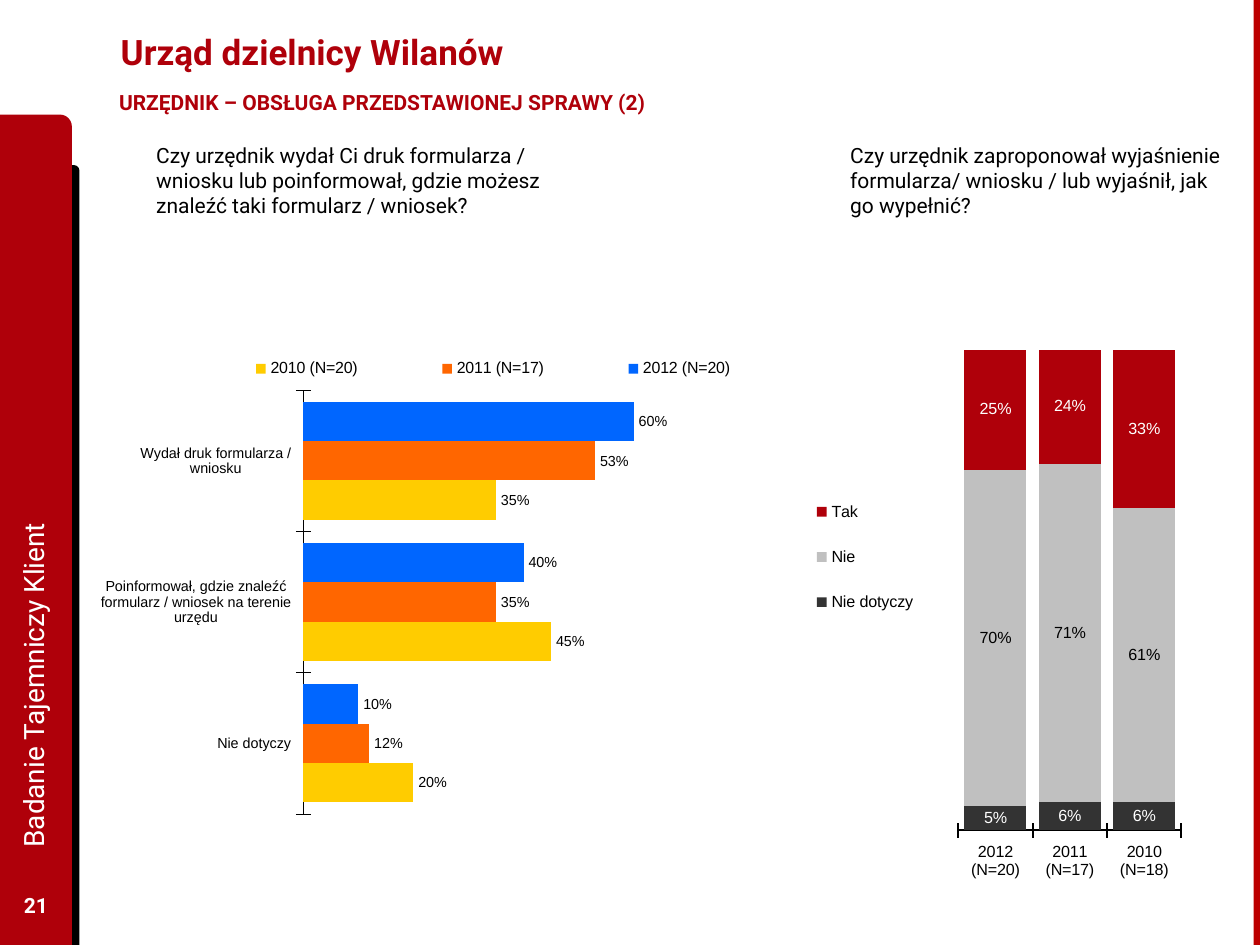
import pptx
import pptx.util
import pptx.oxml
import pptx.oxml.ns
import pptx.dml.color
import pptx.chart.data
import pptx.enum.chart
import pptx.enum.shapes
import pptx.enum.text

Cm = pptx.util.Cm
Pt = pptx.util.Pt
Kind = pptx.enum.chart.XL_CHART_TYPE
Side = pptx.enum.chart.XL_LEGEND_POSITION
Spot = pptx.enum.chart.XL_LABEL_POSITION
Tick = pptx.enum.chart.XL_TICK_MARK
Form = pptx.enum.shapes.MSO_SHAPE
Align = pptx.enum.text.PP_ALIGN
Mid = pptx.enum.text.MSO_ANCHOR.MIDDLE
Top = pptx.enum.text.MSO_ANCHOR.TOP

RED, WHITE, BLACK = "AF000A", "FFFFFF", "000000"


def tint(code):
    return pptx.dml.color.RGBColor.from_string(code)


def place(node, spot, box, inner=False):
    for old in node.findall(pptx.oxml.ns.qn("c:layout")):
        node.remove(old)
    rows = '<c:layoutTarget val="inner"/>' if inner else ""
    rows += '<c:xMode val="edge"/><c:yMode val="edge"/>'
    rows += "".join(f'<c:{key} val="{val}"/>' for key, val in zip("xywh", box))
    decl = pptx.oxml.ns.nsdecls("c")
    node.insert(spot, pptx.oxml.parse_xml(
        f"<c:layout {decl}><c:manualLayout>{rows}</c:manualLayout></c:layout>"))


class Deck:
    face = "Roboto"
    data = "Arial"

    def __init__(self):
        self.file = pptx.Presentation()
        self.file.slide_width = Cm(25.4)
        self.file.slide_height = Cm(19.05)
        self.slide = self.file.slides.add_slide(self.file.slide_layouts[5])

    def block(self, form, box, color):
        shape = self.slide.shapes.add_shape(form, *map(Cm, box))
        shape.shadow.inherit = False
        shape.fill.solid()
        shape.fill.fore_color.rgb = tint(color)
        shape.line.fill.background()

    def style(self, shape, words, size, color, bold, align, anchor):
        frame = shape.text_frame
        frame.text = words
        frame.word_wrap = True
        frame.vertical_anchor = anchor
        para = frame.paragraphs[0]
        para.alignment = align
        font = para.runs[0].font
        font.name = self.face
        font.size = Pt(size)
        font.bold = bold
        font.color.rgb = tint(color)

    def title(self, words, box):
        shape = self.slide.shapes.title
        shape.left, shape.top, shape.width, shape.height = map(Cm, box)
        self.style(shape, words, 20, RED, True, Align.LEFT, Mid)

    def text(self, words, box, size=12, color=BLACK, bold=False,
             align=Align.LEFT, anchor=Top, turn=0, inset=0.25):
        shape = self.slide.shapes.add_textbox(*map(Cm, box))
        shape.rotation = turn
        frame = shape.text_frame
        frame.margin_left = frame.margin_right = Cm(inset)
        self.style(shape, words, size, color, bold, align, anchor)

    def chart(self, kind, box, cats, rows, size, gap, spot, area, side, key, line):
        data = pptx.chart.data.CategoryChartData(number_format="0%")
        data.categories = cats
        for name, vals, _, _ in rows:
            data.add_series(name, vals)
        chart = self.slide.shapes.add_chart(kind, *map(Cm, box), data).chart
        chart.has_title = False
        chart.font.name = self.data
        chart.font.size = Pt(size)
        chart.font.color.rgb = tint(BLACK)

        chart.has_legend = True
        legend = chart.legend
        legend.position = side
        legend.include_in_layout = False
        legend.font.name = self.data
        legend.font.size = Pt(9.2)
        legend.font.color.rgb = tint(BLACK)
        place(legend._element, 1, key)
        place(chart._chartSpace.chart.plotArea, 0, area, True)

        axis = chart.category_axis
        axis.major_tick_mark = Tick.CROSS
        axis.format.line.color.rgb = tint(BLACK)
        axis.format.line.width = Pt(line)
        scale = chart.value_axis
        scale.has_major_gridlines = False
        scale.visible = False
        scale.minimum_scale = 0
        scale.maximum_scale = 1

        plot = chart.plots[0]
        plot.vary_by_categories = False
        plot.gap_width = gap
        for part, (_, _, color, ink) in zip(plot.series, rows):
            part.format.fill.solid()
            part.format.fill.fore_color.rgb = tint(color)
            part.format.line.fill.background()
            label = part.data_labels
            label.show_value = True
            label.number_format = "0%"
            label.number_format_is_linked = False
            label.position = spot
            label.font.name = self.data
            label.font.size = Pt(size)
            label.font.color.rgb = tint(ink)
        return chart


def main():
    deck = Deck()
    deck.block(Form.ROUND_1_RECTANGLE, (0.99, 3.33, 0.61, 15.72), BLACK)
    deck.block(Form.ROUND_1_RECTANGLE, (0, 2.31, 1.45, 16.74), RED)
    deck.block(Form.RECTANGLE, (25.27, 0, 0.13, 19.05), "BD0000")

    deck.title("Urząd dzielnicy Wilanów", (2.18, 0.13, 19.74, 1.83))
    deck.text("Badanie Tajemniczy Klient", (-6.65, 9.37, 14.63, 1.3),
              16, WHITE, anchor=Mid, turn=270)
    deck.text("21", (0, 17.73, 1.45, 1.02), 12, WHITE, True, Align.CENTER, Mid)
    deck.text("URZĘDNIK – OBSŁUGA PRZEDSTAWIONEJ SPRAWY (2)",
              (1.9, 1.68, 12, 0.84), 12, RED, True, inset=0.5)
    deck.text("Czy urzędnik zaproponował wyjaśnienie formularza/ wniosku / "
              "lub wyjaśnił, jak go wypełnić?", (16.89, 2.74, 8, 1.8))
    deck.text("Czy urzędnik wydał Ci druk formularza / wniosku lub poinformował, "
              "gdzie możesz znaleźć taki formularz / wniosek?",
              (2.9, 2.74, 9.37, 1.8))

    stack = deck.chart(
        Kind.COLUMN_STACKED_100, (15.72, 6.32, 8.18, 12.12),
        ["2012 (N=20)", "2011 (N=17)", "2010 (N=18)"],
        [("Nie dotyczy", (0.05, 0.06, 0.06), "333333", WHITE),
         ("Nie", (0.7, 0.71, 0.61), "C0C0C0", BLACK),
         ("Tak", (0.25, 0.24, 0.33), RED, WHITE)],
        9.2, 20, Spot.CENTER, (0.44, 0.06, 0.55, 0.8),
        Side.LEFT, (0.05, 0.27, 0.32, 0.27), 1.17)
    stack.plots[0].overlap = 100

    bars = deck.chart(
        Kind.BAR_CLUSTERED, (2.03, 6.81, 15.19, 9.6),
        ["Wydał druk formularza / wniosku",
         "Poinformował, gdzie znaleźć formularz / wniosek na terenie urzędu",
         "Nie dotyczy"],
        [("2012 (N=20)", (0.6, 0.4, 0.1), "0066FF", BLACK),
         ("2011 (N=17)", (0.53, 0.35, 0.12), "FF6600", BLACK),
         ("2010 (N=20)", (0.35, 0.45, 0.2), "FFCC00", BLACK)],
        8.3, 60, Spot.OUTSIDE_END, (0.26, 0.11, 0.74, 0.89),
        Side.RIGHT, (0.09, 0.03, 0.85, 0.07), 0.25)
    bars.category_axis.reverse_order = True

    deck.file.save("out.pptx")


if __name__ == "__main__":
    main()
